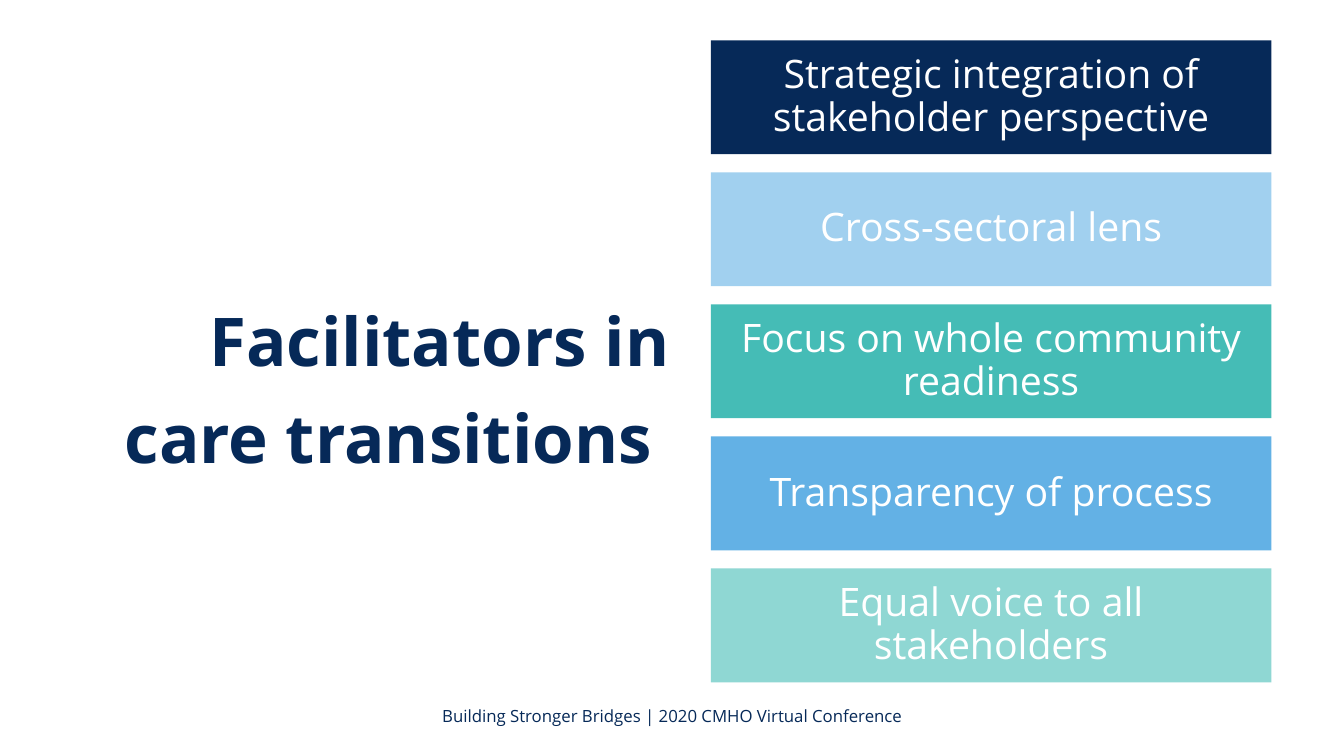
from pptx import Presentation
from pptx.dml.color import RGBColor
from pptx.enum.shapes import MSO_SHAPE
from pptx.enum.text import MSO_ANCHOR, MSO_AUTO_SIZE, PP_ALIGN
from pptx.util import Inches, Pt

NAVY = "062958"
WHITE = "FFFFFF"
FACILITATORS = [
    ("Strategic integration of stakeholder perspective", NAVY),
    ("Cross-sectoral lens", "A1D0EF"),
    ("Focus on whole community readiness", "45BCB6"),
    ("Transparency of process", "63B1E5"),
    ("Equal voice to all stakeholders", "8FD7D3"),
]
BAR_TOP, BAR_PITCH = 0.4, 1.31


def rgb(value):
    return RGBColor.from_string(value)


def apply(target, formats):
    for name, value in formats.items():
        setattr(target, name, value)


def write(sp, text, size, color, align, spacing=1.0, bold=False):
    tf = sp.text_frame
    apply(tf, {"word_wrap": True, "auto_size": MSO_AUTO_SIZE.NONE,
               "vertical_anchor": MSO_ANCHOR.MIDDLE})
    p = tf.paragraphs[0]
    apply(p, {"alignment": align, "line_spacing": spacing})
    r = p.add_run()
    r.text = text
    apply(r.font, {"name": "Open Sans", "size": Pt(size), "bold": bold})
    r.font.color.rgb = rgb(color)


def add_title(s, text):
    sp = s.shapes.title
    apply(sp, {"left": Inches(0.67), "top": Inches(2.85),
               "width": Inches(6.07), "height": Inches(1.84)})
    write(sp, text, 48, NAVY, PP_ALIGN.RIGHT, 1.2, True)


def add_bar(s, top, text, fill):
    sp = s.shapes.add_shape(MSO_SHAPE.RECTANGLE, Inches(7.05), Inches(top),
                            Inches(5.56), Inches(1.13))
    sp.shadow.inherit = False
    sp.fill.solid()
    sp.fill.fore_color.rgb = rgb(fill)
    sp.line.fill.background()
    write(sp, text, 28, WHITE, PP_ALIGN.CENTER, 0.9)


def add_footer(s, text):
    sp = s.shapes.add_textbox(Inches(3.11), Inches(6.9), Inches(7.12), Inches(0.4))
    write(sp, text, 12, NAVY, PP_ALIGN.CENTER)


def main():
    prs = Presentation()
    apply(prs, {"slide_width": Inches(13.33), "slide_height": Inches(7.5)})
    s = prs.slides.add_slide(prs.slide_layouts[5])
    add_title(s, "Facilitators in care transitions ")
    for i, (text, fill) in enumerate(FACILITATORS):
        add_bar(s, BAR_TOP + i * BAR_PITCH, text, fill)
    add_footer(s, "Building Stronger Bridges | 2020 CMHO Virtual Conference")
    prs.save("out.pptx")


if __name__ == "__main__":
    main()
